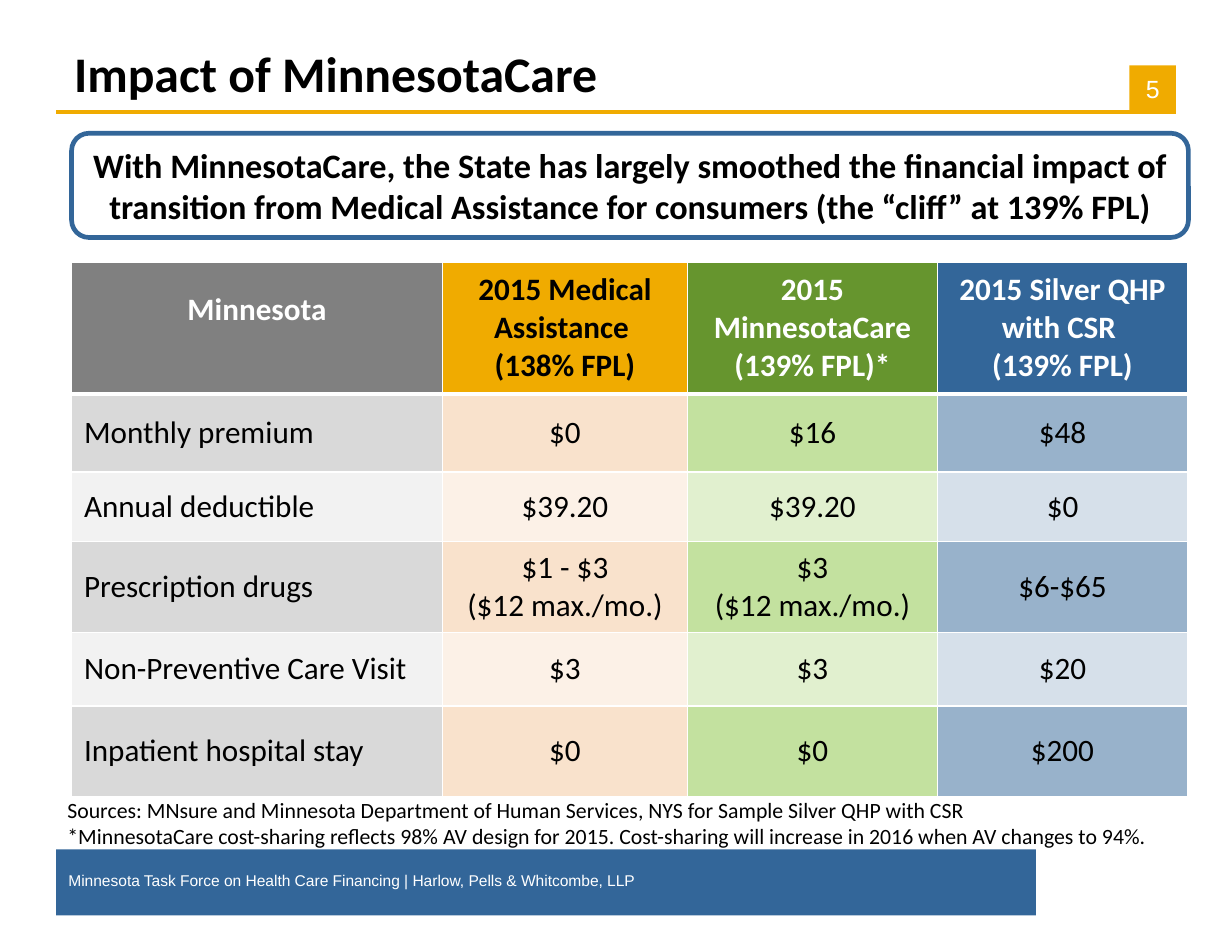
from dataclasses import dataclass

import lxml.etree
import pptx
import pptx.dml.color
import pptx.enum.shapes
import pptx.enum.text
import pptx.oxml
import pptx.oxml.ns
import pptx.util

Pt = pptx.util.Pt
Align = pptx.enum.text.PP_ALIGN
Anchor = pptx.enum.text.MSO_ANCHOR
Shape = pptx.enum.shapes.MSO_SHAPE
qn = pptx.oxml.ns.qn

BLUE, GOLD, GREEN, WHITE, BLACK = "336699", "F0AB00", "66952E", "FFFFFF", "000000"
INSETS = (8, 4, 8, 4)


@dataclass(frozen=True)
class Style:
    size: float
    color: str = BLACK
    bold: bool = False
    font: str = "Calibri"
    align: Align = Align.LEFT
    line_spacing: float = 1.0
    hanging: float = 0


@dataclass(frozen=True)
class Box:
    left: float
    top: float
    width: float
    height: float

    def lengths(self) -> tuple:
        return tuple(Pt(v) for v in (self.left, self.top, self.width, self.height))


@dataclass(frozen=True)
class Column:
    """A table column; band fills are (hex colour, opacity percent)."""
    width: float
    heading: str
    fill: str
    heading_color: str
    bands: tuple
    values: tuple
    align: Align = Align.CENTER
    heading_bottom: float = 4


def rgb(color: str) -> pptx.dml.color.RGBColor:
    return pptx.dml.color.RGBColor.from_string(color)


def set_format(target, values: dict) -> None:
    for name, value in values.items():
        setattr(target, name, value)


def write(frame, text: str, style: Style) -> None:
    """Write each line of text as a paragraph."""
    for index, line in enumerate(text.split("\n")):
        para = frame.paragraphs[0] if index == 0 else frame.add_paragraph()
        set_format(para, {"alignment": style.align, "line_spacing": style.line_spacing})
        if style.hanging:
            properties = para._p.get_or_add_pPr()
            properties.set("marL", str(Pt(style.hanging)))
            properties.set("indent", str(-Pt(style.hanging)))
        span = para.add_run()
        span.text = line
        set_format(span.font, {"name": style.font, "size": Pt(style.size), "bold": style.bold})
        span.font.color.rgb = rgb(style.color)


def set_margins(target, insets: tuple) -> None:
    sides = ("margin_left", "margin_top", "margin_right", "margin_bottom")
    set_format(target, {side: Pt(inset) for side, inset in zip(sides, insets)})


def add_text(page, place: Box, text: str, style: Style,
             anchor: Anchor = Anchor.TOP, insets: tuple = INSETS) -> None:
    frame = page.shapes.add_textbox(*place.lengths()).text_frame
    set_format(frame, {"word_wrap": True, "vertical_anchor": anchor})
    set_margins(frame, insets)
    write(frame, text, style)


def add_panel(page, kind: Shape, place: Box, fill: str | None = None, outline: str | None = None):
    panel = page.shapes.add_shape(kind, *place.lengths())
    panel.shadow.inherit = False
    if fill:
        panel.fill.solid()
        panel.fill.fore_color.rgb = rgb(fill)
    else:
        panel.fill.background()
    if outline:
        panel.line.color.rgb = rgb(outline)
        panel.line.width = Pt(3)
    else:
        panel.line.fill.background()
    set_format(panel.text_frame, {"word_wrap": True, "vertical_anchor": Anchor.MIDDLE})
    return panel


def add_rule(page, left: float, right: float, top: float) -> None:
    rule = page.shapes.add_connector(
        pptx.enum.shapes.MSO_CONNECTOR.STRAIGHT, Pt(left), Pt(top), Pt(right), Pt(top))
    rule.line.color.rgb = rgb(GOLD)
    rule.line.width = Pt(2)
    lxml.etree.SubElement(rule._element.spPr, qn("a:effectLst"))


def fill_cell(cell, color: str, opacity: int = 100) -> None:
    cell.fill.solid()
    cell.fill.fore_color.rgb = rgb(color)
    if opacity < 100:
        tint = cell._tc.tcPr.find(".//" + qn("a:srgbClr"))
        lxml.etree.SubElement(tint, qn("a:alpha")).set("val", str(opacity * 1000))


def border_cell(cell, top: float, bottom: float) -> None:
    """Put white borders ahead of the fill, as the schema requires."""
    for index, (side, width) in enumerate({"L": 1, "R": 1, "T": top, "B": bottom}.items()):
        cell._tc.tcPr.insert(index, pptx.oxml.parse_xml(
            f'<a:ln{side} xmlns:a="http://schemas.openxmlformats.org/drawingml/2006/main" '
            f'w="{Pt(width)}"><a:solidFill><a:srgbClr val="{WHITE}"/></a:solidFill></a:ln{side}>'))


def add_cost_table(page, left: float, top: float, columns: list[Column], heights: list[float]) -> None:
    place = Box(left, top, sum(c.width for c in columns), sum(heights))
    table = page.shapes.add_table(len(heights), len(columns), *place.lengths()).table
    for row, height in zip(table.rows, heights):
        row.height = Pt(height)
    for x, column in enumerate(columns):
        table.columns[x].width = Pt(column.width)
        for y, text in enumerate((column.heading, *column.values)):
            cell = table.cell(y, x)
            cell.vertical_anchor = Anchor.MIDDLE
            if y == 0:
                set_margins(cell, (8, 4, 8, column.heading_bottom))
                fill_cell(cell, column.fill)
                style = Style(20, column.heading_color, True, align=Align.CENTER)
            else:
                set_margins(cell, INSETS)
                fill_cell(cell, *column.bands[(y - 1) % 2])
                style = Style(20, align=column.align)
            border_cell(cell, top=3 if y == 1 else 1, bottom=3 if y == 0 else 1)
            write(cell.text_frame, text, style)


COLUMNS = [
    Column(238.5, "Minnesota", "808080", WHITE, (("D9D9D9",), ("F2F2F2",)),
           ("Monthly premium", "Annual deductible", "Prescription drugs",
            "Non-Preventive Care Visit", "Inpatient hospital stay"),
           align=Align.LEFT, heading_bottom=28),
    Column(157.5, "2015 Medical Assistance \n(138% FPL)", GOLD, BLACK, (("F9E2CC",), ("FCF1E7",)),
           ("$0", "$39.20", "$1 - $3\n($12 max./mo.)", "$3", "$0")),
    Column(160.75, "2015 MinnesotaCare\n(139% FPL)*", GREEN, WHITE, (("C3E19F",), ("E1F0CF",)),
           ("$16", "$39.20", "$3\n($12 max./mo.)", "$3", "$0")),
    Column(160.75, "2015 Silver QHP with CSR \n(139% FPL)", BLUE, WHITE, ((BLUE, 50), (BLUE, 20)),
           ("$48", "$0", "$6-$65", "$20", "$200")),
]


def main() -> None:
    deck = pptx.Presentation()
    set_format(deck, {"slide_width": Pt(792), "slide_height": Pt(612)})
    page = deck.slides.add_slide(deck.slide_layouts[6])

    add_panel(page, Shape.RECTANGLE, Box(36, 546, 630, 42.5), fill=BLUE)
    add_rule(page, 36, 756, 72)
    badge = add_panel(page, Shape.RECTANGLE, Box(726, 42, 30, 30), fill=GOLD)
    set_margins(badge.text_frame, (0, 0, 0, 0))
    write(badge.text_frame, "5", Style(16, WHITE, font="Arial", align=Align.CENTER))

    add_text(page, Box(39.6, 23, 713, 47), "Impact of MinnesotaCare",
             Style(32, bold=True), Anchor.BOTTOM)
    message = add_panel(page, Shape.ROUNDED_RECTANGLE, Box(46, 85.7, 718, 67), outline=BLUE)
    write(message.text_frame,
          "With MinnesotaCare, the State has largely smoothed the financial impact of transition "
          "from Medical Assistance for consumers (the “cliff” at 139% FPL)",
          Style(22, bold=True, align=Align.CENTER))

    add_cost_table(page, 46, 168.5, COLUMNS, [85, 50, 44.5, 58.5, 47.5, 58])

    add_text(page, Box(35.3, 508.3, 756.7, 42),
             "Sources: MNsure and Minnesota Department of Human Services, NYS for Sample Silver QHP with CSR\n"
             "*MinnesotaCare cost-sharing reflects 98% AV design for 2015. "
             "Cost-sharing will increase in 2016 when AV changes to 94%.",
             Style(14, hanging=8.6))
    add_text(page, Box(36, 558, 510, 18),
             "Minnesota Task Force on Health Care Financing | Harlow, Pells & Whitcombe, LLP",
             Style(10, WHITE, font="Arial", line_spacing=0.8), Anchor.MIDDLE, (8, 0, 0, 0))
    deck.save("out.pptx")


if __name__ == "__main__":
    main()
